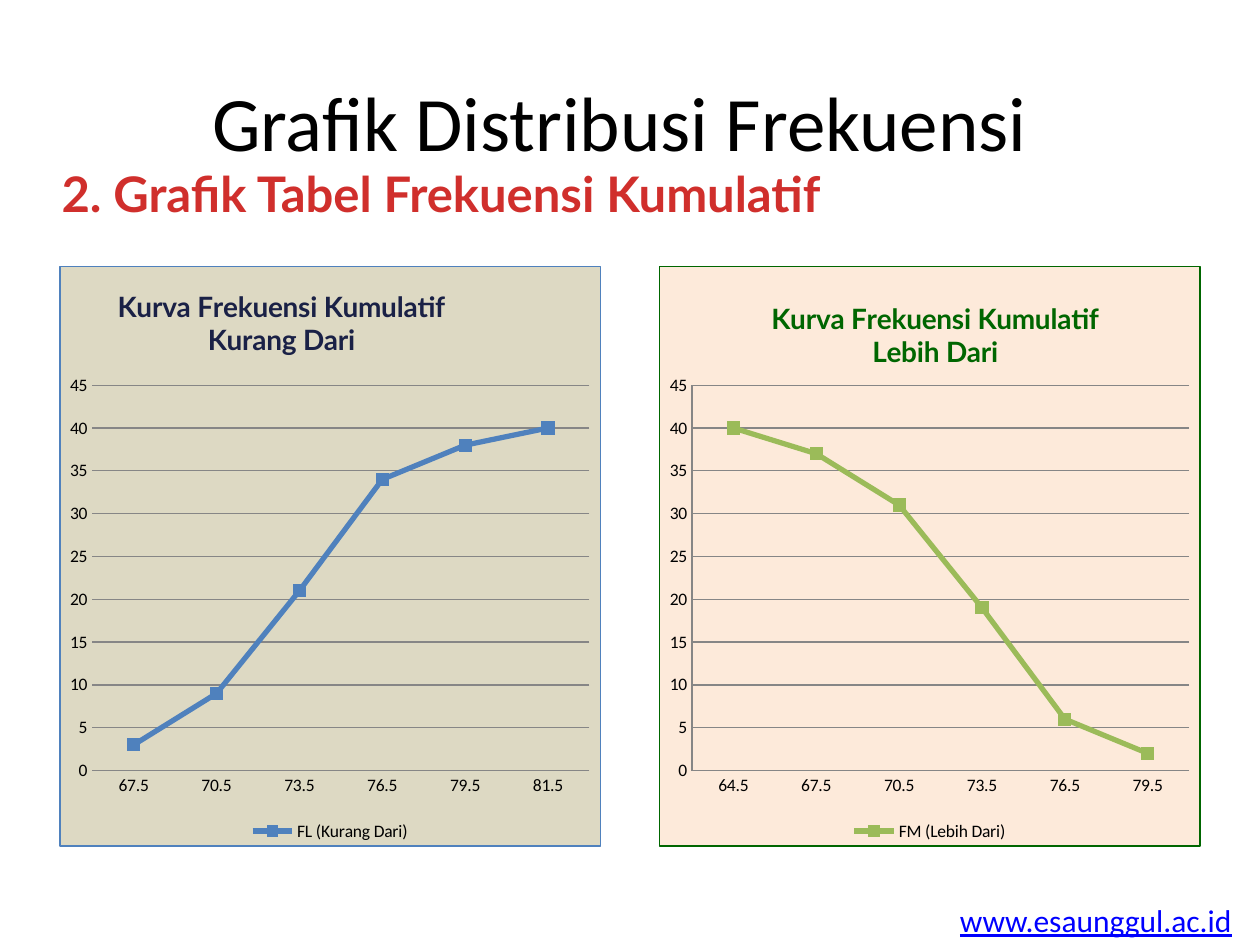
from lxml import etree
from pptx import Presentation
from pptx.chart.data import CategoryChartData
from pptx.dml.color import RGBColor
from pptx.enum.chart import XL_CHART_TYPE, XL_LEGEND_POSITION, XL_MARKER_STYLE, XL_TICK_MARK
from pptx.enum.text import MSO_ANCHOR, PP_ALIGN
from pptx.oxml import parse_xml
from pptx.oxml.ns import nsdecls, qn
from pptx.util import Inches, Pt

BLACK = RGBColor(0, 0, 0)
RED = RGBColor(0xD0, 0x2F, 0x2C)
LINK = RGBColor(0, 0, 0xFF)
NAVY = RGBColor(0x1A, 0x21, 0x46)
BLUE = RGBColor(0x4F, 0x81, 0xBD)
GREEN = RGBColor(0x00, 0x66, 0x00)
LIME = RGBColor(0x9B, 0xBB, 0x59)
SAND = RGBColor(0xDD, 0xD9, 0xC3)
PEACH = RGBColor(0xFD, 0xEA, 0xDA)
GRAY = RGBColor(0x86, 0x86, 0x86)


def add_text(left, top, width, height, text, font, size, color):
    box = page.shapes.add_textbox(Inches(left), Inches(top), Inches(width), Inches(height))
    box.text_frame.word_wrap = True
    span = box.text_frame.paragraphs[0].add_run()
    span.text = text
    span.font.name = font
    span.font.size = Pt(size)
    span.font.color.rgb = color
    return box, span


def set_layout(parent, index, target, **edges):
    for old in parent.findall(qn("c:layout")):
        parent.remove(old)
    layout = parse_xml(f"<c:layout {nsdecls('c')}><c:manualLayout/></c:layout>")
    values = dict(layoutTarget=target) if target else {}
    values.update(xMode="edge", yMode="edge", **edges)
    for name, value in values.items():
        etree.SubElement(layout[0], qn(f"c:{name}")).set("val", str(value))
    parent.insert(index, layout)


deck = Presentation()
deck.slide_width, deck.slide_height = Inches(10), Inches(7.5)
page = deck.slides.add_slide(deck.slide_layouts[6])

box, span = add_text(7.52, 7.1, 2.38, 0.4, "www.esaunggul.ac.id", "Calibri", 18, LINK)
box.text_frame.word_wrap = False
span.font.underline = True

box, span = add_text(0.67, 0.33, 8.5, 1.25, "Grafik Distribusi Frekuensi", "Calibri", 44, BLACK)
box.text_frame.vertical_anchor = MSO_ANCHOR.MIDDLE
box.text_frame.paragraphs[0].alignment = PP_ALIGN.CENTER

box, span = add_text(0.39, 1.25, 7.5, 0.57, "2. Grafik Tabel Frekuensi Kumulatif", "Lato", 28, RED)
span.font.bold = True

curves = [
    (0.47, "Kurang Dari", "FL", 67.5, [3, 9, 21, 34, 38, 40], BLUE, NAVY, SAND, BLUE, (0.1, 0.03)),
    (5.23, "Lebih Dari", "FM", 64.5, [40, 37, 31, 19, 6, 2], LIME, GREEN, PEACH, GREEN, (0.2, 0.05)),
]
for left, kind, code, start, counts, color, title_color, fill, border, corner in curves:
    limits = [start + 3 * step for step in range(6)]
    if kind == "Kurang Dari":
        limits[-1] = 81.5
    data = CategoryChartData()
    data.categories = [str(limit) for limit in limits]
    data.add_series(f"{code} ({kind})", counts)
    chart = page.shapes.add_chart(
        XL_CHART_TYPE.LINE_MARKERS, Inches(left), Inches(2.11), Inches(4.3), Inches(4.61), data
    ).chart
    chart.font.name = "Calibri"
    chart.font.size = Pt(10)
    chart.font.color.rgb = BLACK

    chart.has_title = True
    heading = chart.chart_title.text_frame
    for number, line in enumerate(["Kurva Frekuensi Kumulatif", kind]):
        para = heading.add_paragraph() if number else heading.paragraphs[0]
        para.alignment = PP_ALIGN.CENTER
        span = para.add_run()
        span.text = line
        span.font.name = "Lato"
        span.font.size = Pt(16)
        span.font.bold = True
        span.font.color.rgb = title_color
    root = chart.element.find(qn("c:chart"))
    set_layout(root.find(qn("c:title")), 1, None, x=corner[0], y=corner[1])
    set_layout(root.find(qn("c:plotArea")), 0, "inner", x=0.06, y=0.205, w=0.92, h=0.665)

    chart.has_legend = True
    chart.legend.position = XL_LEGEND_POSITION.BOTTOM
    chart.legend.include_in_layout = False

    values = chart.value_axis
    values.minimum_scale, values.maximum_scale, values.major_unit = 0, 45, 5
    values.has_major_gridlines = True
    values.major_gridlines.format.line.color.rgb = GRAY
    values.major_gridlines.format.line.width = Pt(0.75)
    for axis in (values, chart.category_axis):
        axis.major_tick_mark = XL_TICK_MARK.NONE
        axis.format.line.color.rgb = GRAY
        axis.format.line.width = Pt(0.75)
    if kind == "Kurang Dari":
        values.format.line.fill.background()

    chart.plots[0].vary_by_categories = False
    series = chart.plots[0].series[0]
    series.smooth = False
    series.format.line.color.rgb = color
    series.format.line.width = Pt(3)
    series.marker.style = XL_MARKER_STYLE.SQUARE
    series.marker.size = 7
    series.marker.format.fill.solid()
    series.marker.format.fill.fore_color.rgb = color
    series.marker.format.line.color.rgb = color

    root.addnext(parse_xml(
        f"<c:spPr {nsdecls('c', 'a')}><a:solidFill><a:srgbClr val='{fill}'/></a:solidFill>"
        f"<a:ln w='{Pt(0.75)}'><a:solidFill><a:srgbClr val='{border}'/></a:solidFill></a:ln></c:spPr>"
    ))

deck.save("out.pptx")
